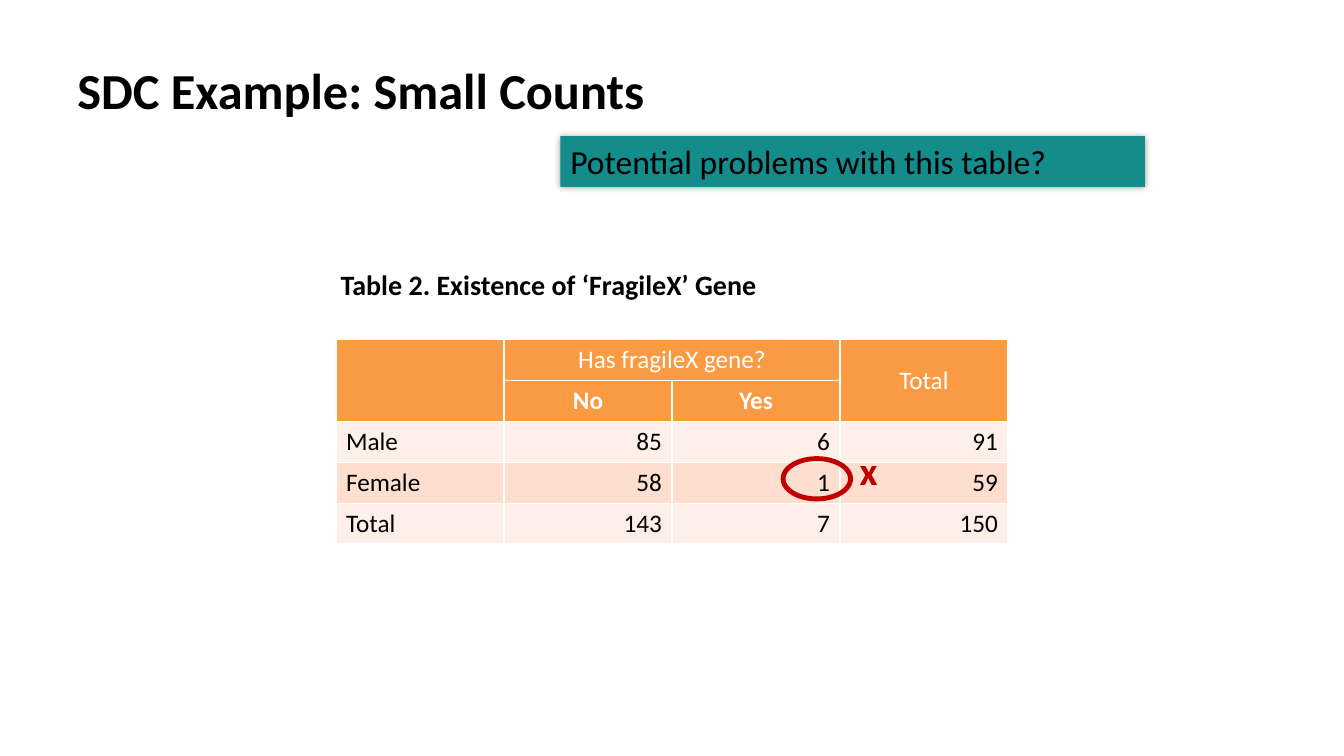
"""Build a slide about small counts in a disclosure control table."""
from lxml.etree import SubElement
from pptx import Presentation
from pptx.dml.color import RGBColor
from pptx.enum.shapes import MSO_SHAPE
from pptx.enum.text import MSO_ANCHOR, MSO_AUTO_SIZE, PP_ALIGN
from pptx.oxml import parse_xml
from pptx.oxml.ns import nsdecls, qn
from pptx.util import Pt

COLORS = {
    "black": "000000",
    "white": "FFFFFF",
    "teal": "148C8B",
    "head": "FA9A42",
    "pale": "FEEFE9",
    "band": "FDDECF",
    "red": "C00000",
}
ROWS = [
    ["", "Has fragileX gene?", "", "Total"],
    ["", "No", "Yes", ""],
    ["Male", "85", "6", "91"],
    ["Female", "58", "1", "59"],
    ["Total", "143", "7", "150"],
]
HEADS = 2


def rgb(name):
    return RGBColor.from_string(COLORS[name])


def write(frame, text, size, color="black", bold=False, align=PP_ALIGN.LEFT):
    frame.text = text
    para = frame.paragraphs[0]
    para.alignment = align
    para.font.name = "Calibri"
    para.font.size = Pt(size)
    para.font.bold = bold
    para.font.color.rgb = rgb(color)
    return para


def add_title(slide, text):
    title = slide.shapes.title
    title.left, title.top = Pt(48), Pt(43.2)
    title.width, title.height = Pt(838.8), Pt(89.3)
    frame = title.text_frame
    frame.vertical_anchor = MSO_ANCHOR.TOP
    frame.auto_size = MSO_AUTO_SIZE.NONE
    write(frame, text, 36, bold=True).line_spacing = 0.9


def add_text(shapes, box, text, size, color="black", wrap=True):
    frame = shapes.add_textbox(*map(Pt, box)).text_frame
    frame.word_wrap = wrap
    write(frame, text, size, color, bold=True)


def add_glow(shape):
    effects = SubElement(shape.fill._xPr, qn("a:effectLst"))
    shadow = SubElement(effects, qn("a:outerShdw"), blurRad=str(Pt(5)), dist="0", dir="0")
    color = SubElement(shadow, qn("a:srgbClr"), val=COLORS["black"])
    SubElement(color, qn("a:alpha"), val="40000")


def add_banner(slide, box, text):
    banner = slide.shapes.add_shape(MSO_SHAPE.RECTANGLE, *map(Pt, box))
    banner.fill.solid()
    banner.fill.fore_color.rgb = rgb("teal")
    banner.line.fill.background()
    add_glow(banner)
    write(banner.text_frame, text, 24)


def add_edges(cell):
    props = cell._tc.get_or_add_tcPr()
    for spot, side in enumerate("LRTB"):
        edge = parse_xml(
            f'<a:ln{side} {nsdecls("a")} w="{Pt(1)}"><a:solidFill>'
            f'<a:srgbClr val="{COLORS["white"]}"/></a:solidFill></a:ln{side}>'
        )
        props.insert(spot, edge)


def style_cell(cell, text, row, col):
    head = row < HEADS
    if head:
        fill, align = "head", PP_ALIGN.CENTER
    else:
        fill = "band" if row % 2 else "pale"
        align = PP_ALIGN.RIGHT if col else PP_ALIGN.LEFT
    cell.fill.solid()
    cell.fill.fore_color.rgb = rgb(fill)
    add_edges(cell)
    write(cell.text_frame, text, 18, "white" if head else "black", row == 1, align)


def add_counts(slide, box):
    table = slide.shapes.add_table(len(ROWS), len(ROWS[0]), *map(Pt, box)).table
    for row, texts in enumerate(ROWS):
        for col, text in enumerate(texts):
            style_cell(table.cell(row, col), text, row, col)
    table.cell(0, 0).merge(table.cell(1, 0))
    table.cell(0, 1).merge(table.cell(0, 2))
    table.cell(0, 3).merge(table.cell(1, 3))
    table.cell(0, 3).vertical_anchor = MSO_ANCHOR.MIDDLE


def add_mark(slide):
    shapes = slide.shapes.add_group_shape().shapes
    ring = shapes.add_shape(MSO_SHAPE.OVAL, Pt(559.4), Pt(327.6), Pt(48.2), Pt(28.8))
    ring.shadow.inherit = False
    ring.fill.background()
    ring.line.color.rgb = rgb("red")
    ring.line.width = Pt(3.5)
    add_text(shapes, (607, 315.4, 30.2, 41), "x", 28, "red", wrap=False)


def main():
    deck = Presentation()
    deck.slide_width, deck.slide_height = Pt(960), Pt(540)
    slide = deck.slides.add_slide(deck.slide_layouts[5])
    add_title(slide, "SDC Example: Small Counts")
    add_banner(slide, (400.3, 97.2, 417.6, 36.4), "Potential problems with this table?")
    add_counts(slide, (240, 242.6, 480, 146))
    add_mark(slide)
    add_text(slide.shapes, (236.2, 187.2, 495.4, 31.5), "Table 2. Existence of ‘FragileX’ Gene", 20)
    deck.save("out.pptx")


if __name__ == "__main__":
    main()
